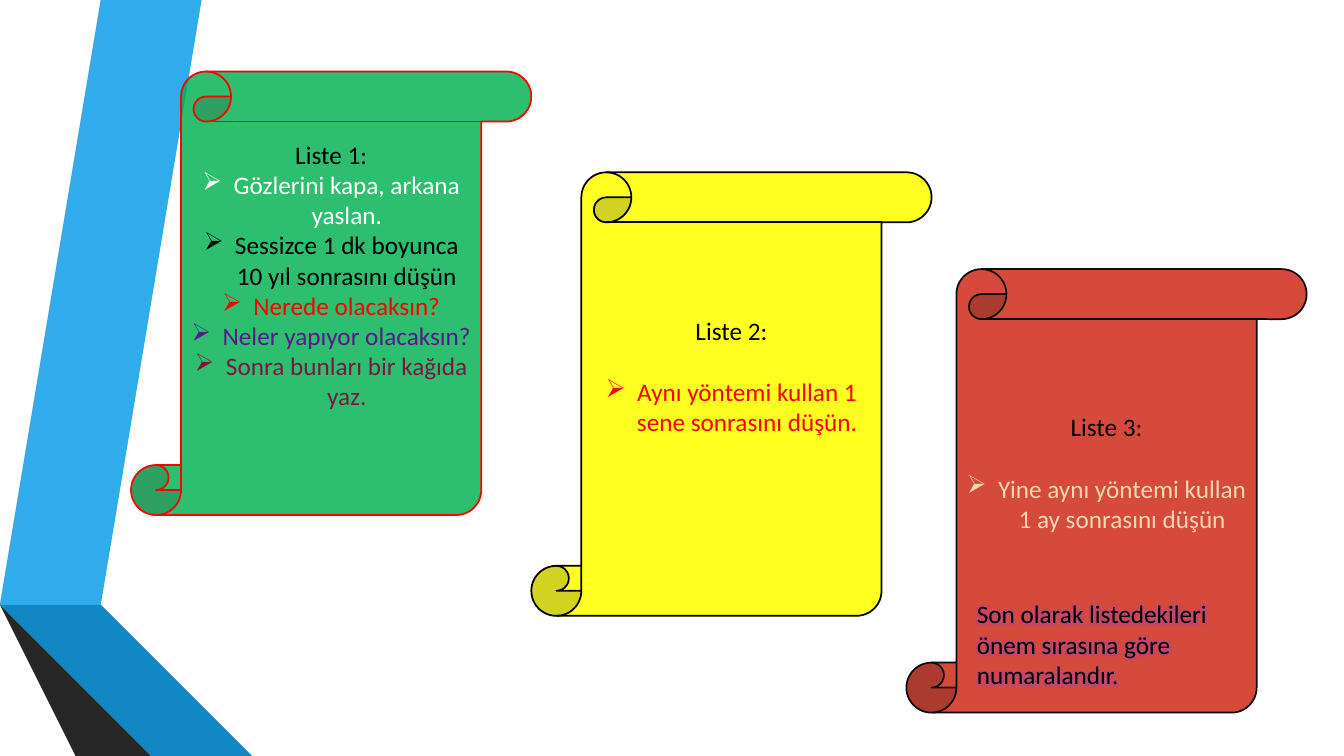
from dataclasses import dataclass

from lxml import etree
from pptx import Presentation
from pptx import util as u
from pptx.dml.color import RGBColor
from pptx.enum import shapes, text
from pptx.oxml import ns

# Content: heading, fill, opacity %, line, (left, top), gap after heading in lines, items
SCROLLS = [
    ("Liste 1:", "00B050", 82, "FF0000", (1.3, 0.71), 0, [
        ("Gözlerini kapa, arkana yaslan.", "FFFFFF"),
        ("Sessizce 1 dk boyunca 10 yıl sonrasını düşün", "000000"),
        ("Nerede olacaksın?", "FF0000"),
        ("Neler yapıyor olacaksın?", "541B89"),
        ("Sonra bunları bir kağıda yaz.", "751A43")]),
    ("Liste 2:", "FFFF00", 87, "000000", (5.27, 1.71), 1, [
        ("Aynı yöntemi kullan 1 sene sonrasını düşün.", "FF0000")]),
    ("Liste 3:", "D64A3B", 100, "0D0D0D", (8.99, 2.67), 1, [
        ("Yine aynı yöntemi kullan 1 ay sonrasını düşün", "F3D8B2")]),
]
CLOSING = "Son olarak listedekileri önem sırasına göre numaralandır."

# Ribbon down the left edge: colour, corner points in inches
RIBBON = [
    ("30ACEC", [(0.5, 5.78), (0.77, 5.83), (1.73, 0), (1.45, 0)]),
    ("595959", [(1.39, 0), (1.11, 0), (0.16, 5.73), (0.44, 5.77)]),
    ("262626", [(0.16, 5.73), (1.45, 7.5), (1.51, 7.5)]),
    ("0C5A82", [(0.5, 5.79), (2.08, 7.5), (2.14, 7.5)]),
    ("1287C3", [(0.5, 5.79), (2.14, 7.5), (2.83, 7.5), (0.77, 5.83), (0.5, 5.78)]),
    ("404040", [(2.02, 7.5), (0.48, 5.83), (0.44, 5.77), (0.16, 5.73), (1.51, 7.5)]),
]


@dataclass(frozen=True)
class Theme:
    font: str = "Calibri"
    size: int = 18
    line_height: float = 22  # points
    ink: str = "000000"
    glow: str = "A040C0"
    scroll_size: tuple = (3.97, 4.4)
    indent: float = 0.31
    border: float = 1.25


THEME = Theme()


def style_runs(paragraph, colour):
    for run in paragraph.runs:
        run.font.name = THEME.font
        run.font.size = u.Pt(THEME.size)
        run.font.color.rgb = RGBColor.from_string(colour)


def paint(shape, colour, opacity=100):
    shape.shadow.inherit = False
    shape.fill.solid()
    shape.fill.fore_color.rgb = RGBColor.from_string(colour)
    if opacity < 100:
        colour_node = shape.fill._xPr.find(".//" + ns.qn("a:srgbClr"))
        etree.SubElement(colour_node, ns.qn("a:alpha"), val=str(opacity * 1000))


def add_bullet(paragraph):
    properties = paragraph._p.get_or_add_pPr()
    indent = u.Inches(THEME.indent)
    properties.set("marL", str(indent))
    properties.set("indent", str(-indent))
    etree.SubElement(properties, ns.qn("a:buChar"), char="➢")


def add_glow(run):
    effects = etree.Element(ns.qn("a:effectLst"))
    glow = etree.SubElement(effects, ns.qn("a:glow"), rad=str(u.Pt(8)))
    colour = etree.SubElement(glow, ns.qn("a:srgbClr"), val=THEME.glow)
    etree.SubElement(colour, ns.qn("a:alpha"), val="40000")
    run.font._rPr.find(ns.qn("a:solidFill")).addnext(effects)


def add_ribbon(slide):
    for colour, points in RIBBON:
        builder = slide.shapes.build_freeform(*points[0], scale=u.Inches(1))
        builder.add_line_segments(points[1:], close=True)
        band = builder.convert_to_shape()
        paint(band, colour)
        band.line.fill.background()


def add_scroll(slide, heading, fill, opacity, line, corner, gap, items):
    box = [u.Inches(value) for value in corner + THEME.scroll_size]
    scroll = slide.shapes.add_shape(shapes.MSO_SHAPE.VERTICAL_SCROLL, *box)
    paint(scroll, fill, opacity)
    scroll.line.color.rgb = RGBColor.from_string(line)
    scroll.line.width = u.Pt(THEME.border)

    frame = scroll.text_frame
    frame.word_wrap = True
    frame.vertical_anchor = text.MSO_ANCHOR.MIDDLE
    # Two lines of room below the list lift the centred text
    frame.margin_bottom = u.Inches(0.05) + u.Pt(2 * THEME.line_height)
    frame.text = "\n".join([heading] + [words for words, _ in items])
    colours = [THEME.ink] + [colour for _, colour in items]
    for paragraph, colour in zip(frame.paragraphs, colours):
        paragraph.alignment = text.PP_ALIGN.CENTER
        style_runs(paragraph, colour)
    title, *bullets = frame.paragraphs
    title.space_after = u.Pt(gap * THEME.line_height)
    for paragraph in bullets:
        add_bullet(paragraph)


def add_closing(slide):
    box = [u.Inches(value) for value in (9.59, 5.89, 2.84, 1.01)]
    frame = slide.shapes.add_textbox(*box).text_frame
    frame.word_wrap = True
    frame.text = CLOSING
    style_runs(frame.paragraphs[0], THEME.ink)
    add_glow(frame.paragraphs[0].runs[0])


def main():
    presentation = Presentation()
    presentation.slide_width = u.Inches(13.33)
    presentation.slide_height = u.Inches(7.5)
    slide = presentation.slides.add_slide(presentation.slide_layouts[6])
    add_ribbon(slide)
    for scroll in SCROLLS:
        add_scroll(slide, *scroll)
    add_closing(slide)
    presentation.save("out.pptx")


if __name__ == "__main__":
    main()
